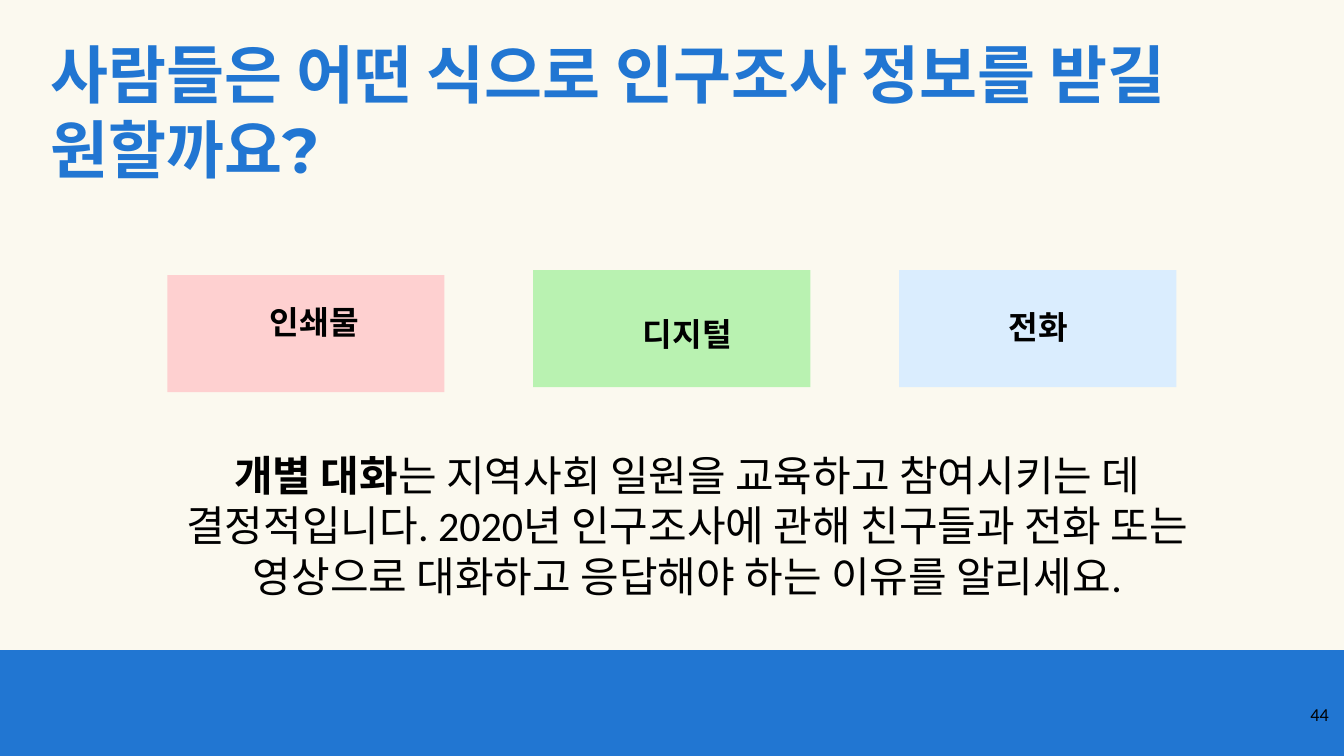
"""Build the slide on how people want to receive census information."""
from pptx import Presentation, util as u
from pptx.dml.color import RGBColor
from pptx.enum import shapes, text
from pptx.oxml.ns import qn
from lxml import etree

HEX = {"cream": "FBF9EF", "blue": "2176D2", "black": "000000",
       "pink": "FED0D0", "green": "B9F2B1", "sky": "DAEDFE"}
WIDE, HIGH = 960, 540
BAND = 464.4
TITLE = [("사람들은 어떤 식으로 인구조사 정보를 받길 원할까요?", "Montserrat", True)]
BODY = [
    ("개별 대화", "Noto Sans CJK KR", True),
    ("는 지역사회 일원을 교육하고 참여시키는 데 결정적입니다", "Noto Sans CJK KR", False),
    (". 2020", "Calibri", False),
    ("년 인구조사에 관해 친구들과 전화 또는 영상으로 대화하고 응답해야 하는 이유를 알리세요",
     "Noto Sans CJK KR", False),
    (".", "Calibri", False),
]
CARDS = [
    ("인쇄물", "pink", 196.6, 96.5, 212.4),
    ("디지털", "green", 193, 362.9, 221),
    ("전화", "sky", 193, 613.4, 216),
]
LEFT, STEP, CARD = 119.5, 261.4, (198, 83.5)
LABEL = (256.3, 46)

prs = Presentation()
prs.slide_width, prs.slide_height = u.Pt(WIDE), u.Pt(HIGH)
slide = prs.slides.add_slide(prs.slide_layouts[1])


def color(name):
    return RGBColor.from_string(HEX[name])


def block(name, *box):
    rect = slide.shapes.add_shape(shapes.MSO_SHAPE.RECTANGLE, *map(u.Pt, box))
    rect.shadow.inherit = False
    rect.fill.solid()
    rect.fill.fore_color.rgb = color(name)
    rect.line.fill.background()


def write(shape, runs, size, align, tint="black"):
    frame = shape.text_frame
    frame.word_wrap = True
    frame.auto_size = text.MSO_AUTO_SIZE.NONE
    frame.vertical_anchor = text.MSO_ANCHOR.TOP
    para = frame.paragraphs[0]
    para.alignment = align
    para.space_before = u.Pt(0)
    for words, face, bold in runs:
        run = para.add_run()
        run.text = words
        font = run.font
        font.name, font.size, font.bold = face, u.Pt(size), bold
        font.color.rgb = color(tint)
    return para


def place(shape, *box):
    shape.left, shape.top, shape.width, shape.height = map(u.Pt, box)


def label(runs, size, align, *box):
    write(slide.shapes.add_textbox(*map(u.Pt, box)), runs, size, align)


slide.background.fill.solid()
slide.background.fill.fore_color.rgb = color("cream")
left, mid, right = text.PP_ALIGN.LEFT, text.PP_ALIGN.CENTER, text.PP_ALIGN.RIGHT

block("blue", 0, BAND, WIDE, HIGH - BAND)
title, body = slide.placeholders
place(title, 28.8, 21.6, 902.2, 181.4)
write(title, TITLE, 45, left, "blue")

for i, (name, tint, top, x, y) in enumerate(CARDS):
    block(tint, LEFT + i * STEP, top, *CARD)
    label([(name, "Open Sans", True)], 23, mid, x, y, *LABEL)

label([("44", "Calibri", False)], 13, right, 898.6, 499, 57.6, 41)

place(body, 90, 317.5, 802.1, 152.6)
props = write(body, BODY, 30, mid)._p.get_or_add_pPr()
props.set("marL", "0")
props.set("indent", "0")
etree.SubElement(props, qn("a:buNone"))

prs.save("out.pptx")
